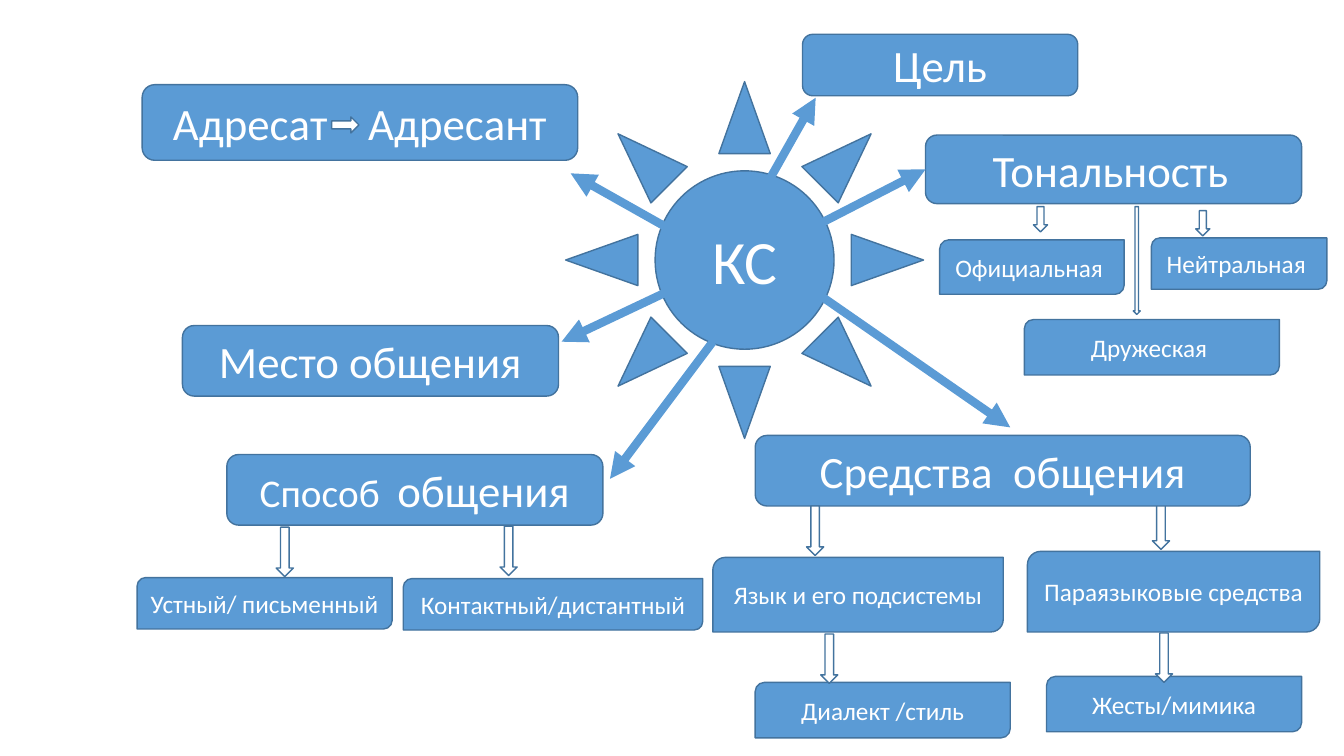
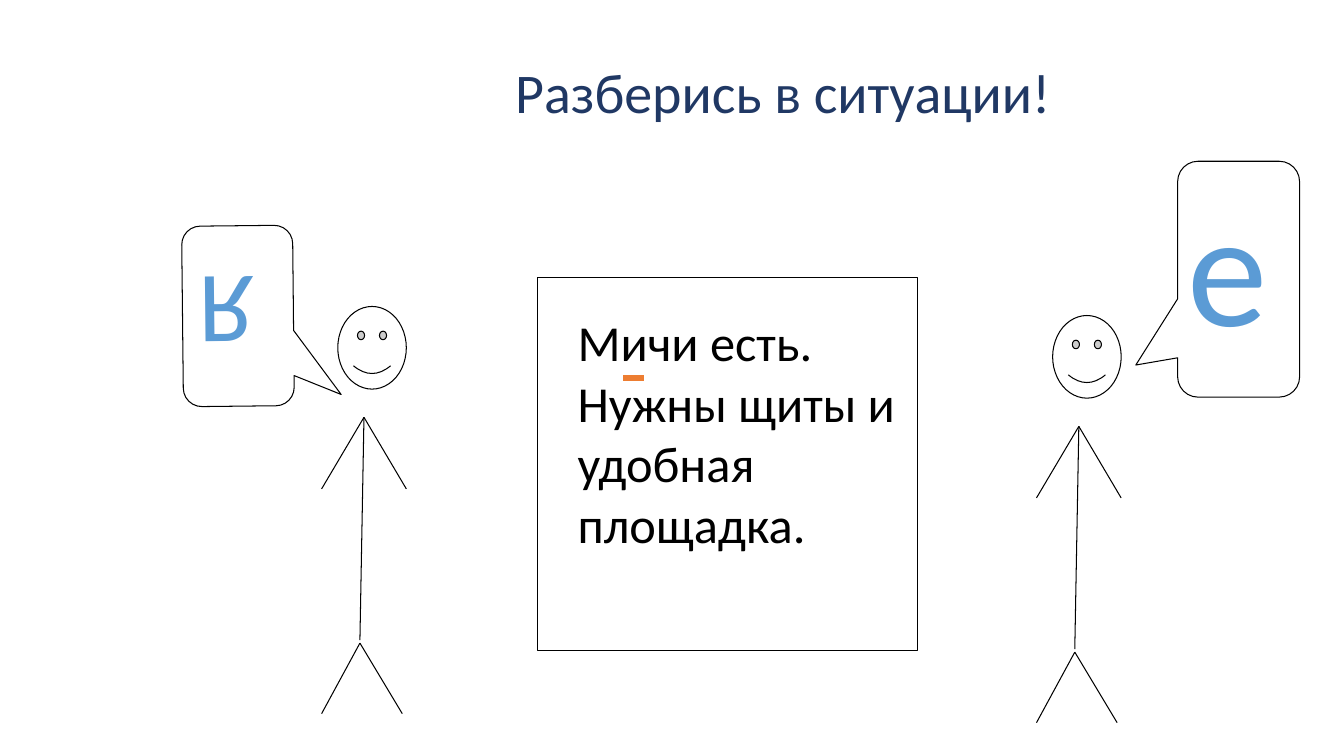
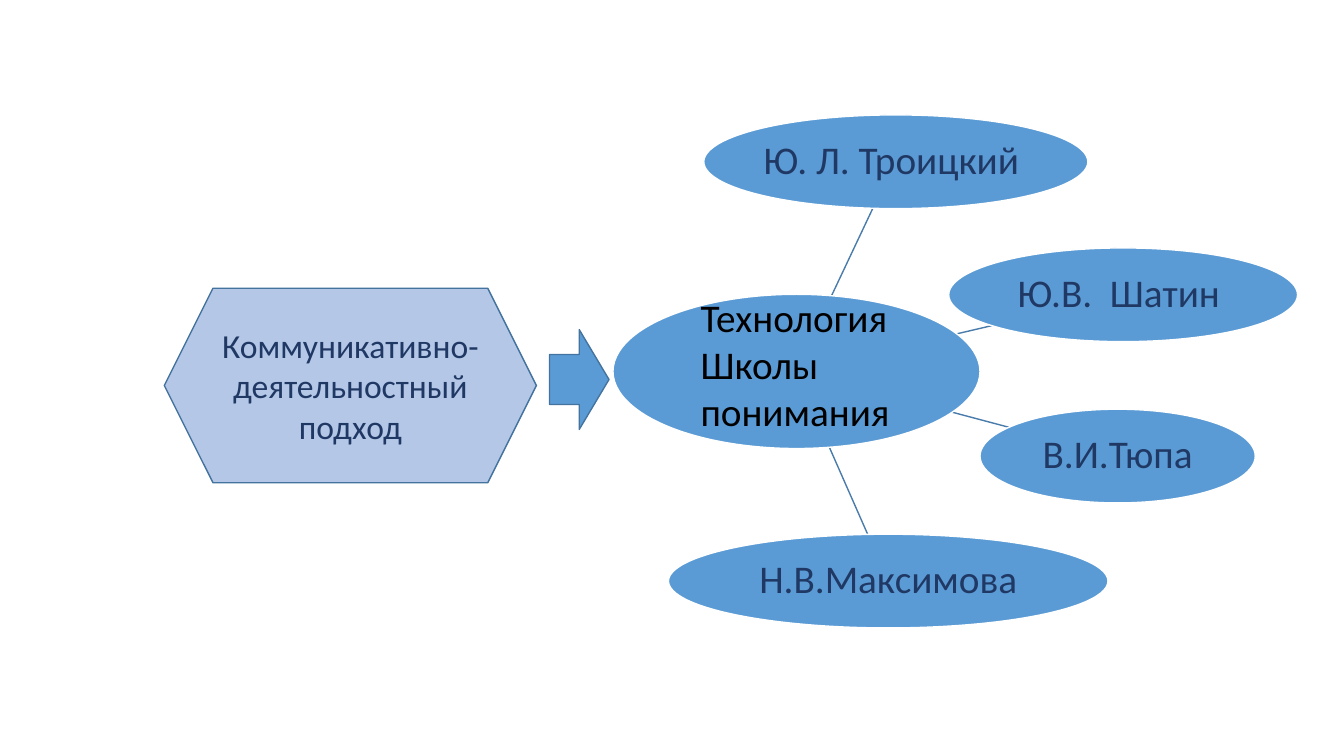
"""Builds three slides about the communicative situation."""
from dataclasses import dataclass, field
from typing import Any

from lxml import etree
from pptx import Presentation
from pptx.dml.color import RGBColor
from pptx.enum import shapes, text
from pptx.oxml.ns import qn
from pptx import util as u

PX = u.Inches(1) // 100
FONT = "Calibri"
COLORS = {
    "blue": "5B9BD5", "edge": "43739E", "spoke": "497CAB", "navy": "203864",
    "pale": "B4C7E7", "orange": "ED7D31", "white": "FFFFFF", "black": "000000",
}
KIND = shapes.MSO_SHAPE
MIDDLE = {"vertical_anchor": text.MSO_ANCHOR.MIDDLE, "word_wrap": True}
TOP = {"vertical_anchor": text.MSO_ANCHOR.TOP, "word_wrap": True}
CENTER = {"alignment": text.PP_ALIGN.CENTER}
LEFT = {"alignment": text.PP_ALIGN.LEFT}
LOOSE = {**LEFT, "line_spacing": 1.15, "space_after": u.Pt(10)}
MARGINS = ("margin_left", "margin_top", "margin_right", "margin_bottom")
TIGHT = {**MIDDLE, **dict.fromkeys(MARGINS, 2 * PX)}


@dataclass(frozen=True)
class Run:
    """A piece of text with its size and letter spacing in points."""
    words: str
    size: float
    spacing: float = 0


@dataclass(frozen=True)
class Label:
    """Paragraphs of runs with their colour and formats."""
    paragraphs: list[list[Run]]
    color: str = "white"
    frame: dict[str, Any] = field(default_factory=lambda: MIDDLE)
    paragraph: dict[str, Any] = field(default_factory=lambda: CENTER)


@dataclass(frozen=True)
class Block:
    """A preset shape placed in px."""
    kind: Any
    box: tuple[int, int, int, int]
    label: Label | None = None
    fill: str = "blue"
    edge: str = "edge"
    weight: float = 1
    rotation: float = 0
    adjust: tuple[float, ...] = ()


@dataclass(frozen=True)
class Stroke:
    """A straight line between two points in px."""
    start: tuple[int, int]
    end: tuple[int, int]
    color: str = "black"
    weight: float = 0.75
    arrow: bool = False


def rgb(name: str) -> RGBColor:
    """Gives a palette colour."""
    return RGBColor.from_string(COLORS[name])


def scaled(lengths: tuple[int, ...]) -> list[int]:
    """Turns px into EMU."""
    return [length * PX for length in lengths]


def assign(target: Any, formats: dict[str, Any]) -> None:
    """Sets each format on the target."""
    for key, value in formats.items():
        setattr(target, key, value)


def plain(words: str, size: float, **formats: Any) -> Label:
    """Makes a label of one run per line."""
    return Label([[Run(line, size)] for line in words.split("\n")], **formats)


def write(frame: Any, label: Label) -> None:
    """Fills a text frame with a label."""
    assign(frame, label.frame)
    for number, runs in enumerate(label.paragraphs):
        paragraph = frame.add_paragraph() if number else frame.paragraphs[0]
        assign(paragraph, label.paragraph)
        for piece in runs:
            run = paragraph.add_run()
            run.text = piece.words
            assign(run.font, {"size": u.Pt(piece.size), "name": FONT})
            run.font.color.rgb = rgb(label.color)
            if piece.spacing:
                run.font._element.set("spc", str(round(piece.spacing * 100)))


def draw_block(slide: Any, block: Block) -> Any:
    """Draws a preset shape."""
    shape = slide.shapes.add_shape(block.kind, *scaled(block.box))
    shape.shadow.inherit = False
    shape.rotation = block.rotation
    shape.fill.solid()
    shape.fill.fore_color.rgb = rgb(block.fill)
    shape.line.color.rgb = rgb(block.edge)
    shape.line.width = u.Pt(block.weight)
    for number, value in enumerate(block.adjust):
        shape.adjustments[number] = value
    if block.label:
        write(shape.text_frame, block.label)
    return shape


def draw_stroke(slide: Any, stroke: Stroke) -> Any:
    """Draws a straight connector."""
    line = slide.shapes.add_connector(
        shapes.MSO_CONNECTOR.STRAIGHT, *scaled(stroke.start + stroke.end))
    line.line.color.rgb = rgb(stroke.color)
    line.line.width = u.Pt(stroke.weight)
    if stroke.arrow:
        etree.SubElement(line.line._get_or_add_ln(), qn("a:tailEnd"), type="triangle")
    etree.SubElement(line._element.spPr, qn("a:effectLst"))
    return line


def draw_text(slide: Any, box: tuple[int, int, int, int], label: Label) -> None:
    """Draws a text box."""
    write(slide.shapes.add_textbox(*scaled(box)).text_frame, label)


def draw_person(slide: Any, left: int, top: int) -> None:
    """Draws a stick figure whose head starts at the given point."""
    draw_block(slide, Block(KIND.SMILEY_FACE, (left, top, 68, 82), fill="white",
                            edge="black", weight=0.75, adjust=(0.047,)))
    neck, waist, hip = (26, 110), (22, 331), (22, 334)
    limbs = [(neck, waist), (neck, (-16, 181)), (neck, (68, 181)),
             (hip, (-16, 404)), (hip, (64, 404))]
    for start, end in limbs:
        draw_stroke(slide, Stroke((left + start[0], top + start[1]),
                                  (left + end[0], top + end[1])))


def build_situation(slide: Any) -> None:
    """Draws the map of the communicative situation."""
    def down(left: int, top: int, width: int = 17, height: int = 49) -> Block:
        """Makes a white down arrow."""
        return Block(KIND.DOWN_ARROW, (left, top, width, height), fill="white")

    draw_block(slide, down(1143, 496))
    draw_block(slide, Block(KIND.SUN, (561, 81, 355, 354), plain("КС", 44)))
    topics = [
        ((749, 432, 491, 70), [Run("Средства", 32), Run(" ", 32, 7.2), Run("общения", 32)]),
        ((141, 84, 432, 75), [Run("Адресат", 32), Run(" ", 32, 21.7), Run("Адресант", 32)]),
        ((796, 34, 273, 61), [Run("Цель", 32)]),
        ((181, 323, 373, 70), [Run("Место общения", 32)]),
        ((225, 451, 373, 70), [Run("Способ", 28), Run(" ", 28, 6.3), Run("общения", 32)]),
        ((918, 134, 373, 68), [Run("Тональность", 32), Run(" ", 18)]),
    ]
    for box, runs in topics:
        tonality = draw_block(slide, Block(KIND.ROUNDED_RECTANGLE, box, Label([runs])))
    details = [
        ((932, 238, 183, 54), "Официальная "),
        ((1142, 236, 174, 51), "Нейтральная "),
        ((1016, 317, 253, 55), "Дружеская "),
        ((707, 553, 288, 74), "Язык и его подсистемы"),
        ((1019, 547, 290, 80), "Параязыковые средства"),
        ((136, 573, 253, 51), "Устный/ письменный "),
        ((400, 574, 297, 51), "Контактный/дистантный"),
        ((1038, 671, 253, 55), "Жесты/мимика"),
        ((749, 677, 253, 55), "Диалект /стиль"),
    ]
    for box, words in details:
        draw_block(slide, Block(KIND.ROUND_2_DIAG_RECTANGLE, box, plain(words, 18)))
    rays = [
        ((809, 290), (1002, 424)), ((669, 286), (557, 339)),
        ((761, 182), (809, 97)), ((669, 230), (566, 172)),
        ((707, 339), (605, 475)), ((815, 221), (918, 168)),
    ]
    for start, end in rays:
        ray = draw_stroke(slide, Stroke(start, end, "blue", 6, True))
    ray.end_connect(tonality, 1)
    draw_block(slide, Block(KIND.RIGHT_ARROW, (329, 116, 27, 16), fill="white"))
    tone_arrows = [(1025, 205, 14, 25), (1186, 209, 14, 25), (1124, 205, 7, 107)]
    branch_arrows = [(800, 502), (814, 629), (1146, 628), (274, 523), (496, 522)]
    for place in tone_arrows + branch_arrows:
        draw_block(slide, down(*place))


def build_dialogue(slide: Any) -> None:
    """Draws two speakers beside a note."""
    title = slide.shapes.title
    assign(title, dict(zip(("left", "top", "width", "height"), scaled((501, 52, 556, 77)))))
    write(title.text_frame, plain("Разберись в ситуации!", 40, color="navy",
                                  frame={**TOP, "word_wrap": False}, paragraph=LEFT))
    outline = {"fill": "white", "edge": "black", "weight": 0.75}
    bubble = KIND.ROUNDED_RECTANGULAR_CALLOUT
    turned = plain("Я", 72, color="blue", paragraph=LOOSE,
                   frame={**TOP, "margin_left": 33 * PX, "margin_right": 0})
    for block in (
        Block(bubble, (1168, 160, 121, 234), adjust=(-0.843, 0.364, 0.167), **outline),
        Block(KIND.RECTANGLE, (533, 275, 377, 370), **outline),
        Block(bubble, (181, 224, 110, 179), turned, rotation=179.4,
              adjust=(-0.923, -0.441, 0.167), **outline),
    ):
        draw_block(slide, block)
    for left, top in ((1044, 313), (335, 304)):
        draw_person(slide, left, top)
    draw_text(slide, (563, 304, 401, 252), plain(
        "Мичи есть.\nНужны щиты и удобная площадка.", 36,
        color="black", frame=TOP, paragraph=LEFT))
    draw_stroke(slide, Stroke((618, 375), (639, 375), "orange", 4.5))
    draw_text(slide, (1168, 131, 76, 220),
              plain("е", 115, color="blue", frame=TOP, paragraph=LOOSE))


def build_school(slide: Any) -> None:
    """Draws the approach and the authors of the school."""
    spokes = [((813, 422), (861, 531)), ((843, 382), (1001, 424)),
              ((843, 356), (984, 323)), ((815, 314), (866, 206))]
    for start, end in spokes:
        draw_stroke(slide, Stroke(start, end, "spoke", 1))
    draw_block(slide, Block(KIND.OVAL, (608, 292, 364, 153), edge="white"))
    authors = [
        ((698, 114, 381, 93), [Run("Ю. Л. Троицкий ", 28)]),
        ((941, 246, 346, 93), [Run("Ю.В.", 28), Run(" ", 28, 6.3), Run("Шатин ", 28)]),
        ((972, 406, 273, 93), [Run("В.И.Тюпа", 28)]),
        ((663, 530, 436, 93), [Run("Н.В.Максимова", 28)]),
    ]
    for box, runs in authors:
        name = Label([runs], "navy", TIGHT, {**CENTER, "line_spacing": 0.9})
        draw_block(slide, Block(KIND.OVAL, box, name, edge="white"))
    draw_text(slide, (685, 286, 227, 151), plain(
        "Технология Школы понимания", 28, color="black", frame=TOP, paragraph=LEFT))
    draw_block(slide, Block(KIND.HEXAGON, (163, 286, 369, 193), plain(
        "Коммуникативно-деятельностный подход", 24, color="navy"), fill="pale"))
    draw_block(slide, Block(KIND.RIGHT_ARROW, (545, 327, 59, 99)))


def main() -> None:
    """Builds and saves the presentation."""
    deck = Presentation()
    deck.slide_width, deck.slide_height = scaled((1333, 750))
    title_only, blank = deck.slide_layouts[5], deck.slide_layouts[6]
    for build, layout in ((build_situation, blank), (build_dialogue, title_only),
                          (build_school, blank)):
        build(deck.slides.add_slide(layout))
    deck.save("out.pptx")


if __name__ == "__main__":
    main()
